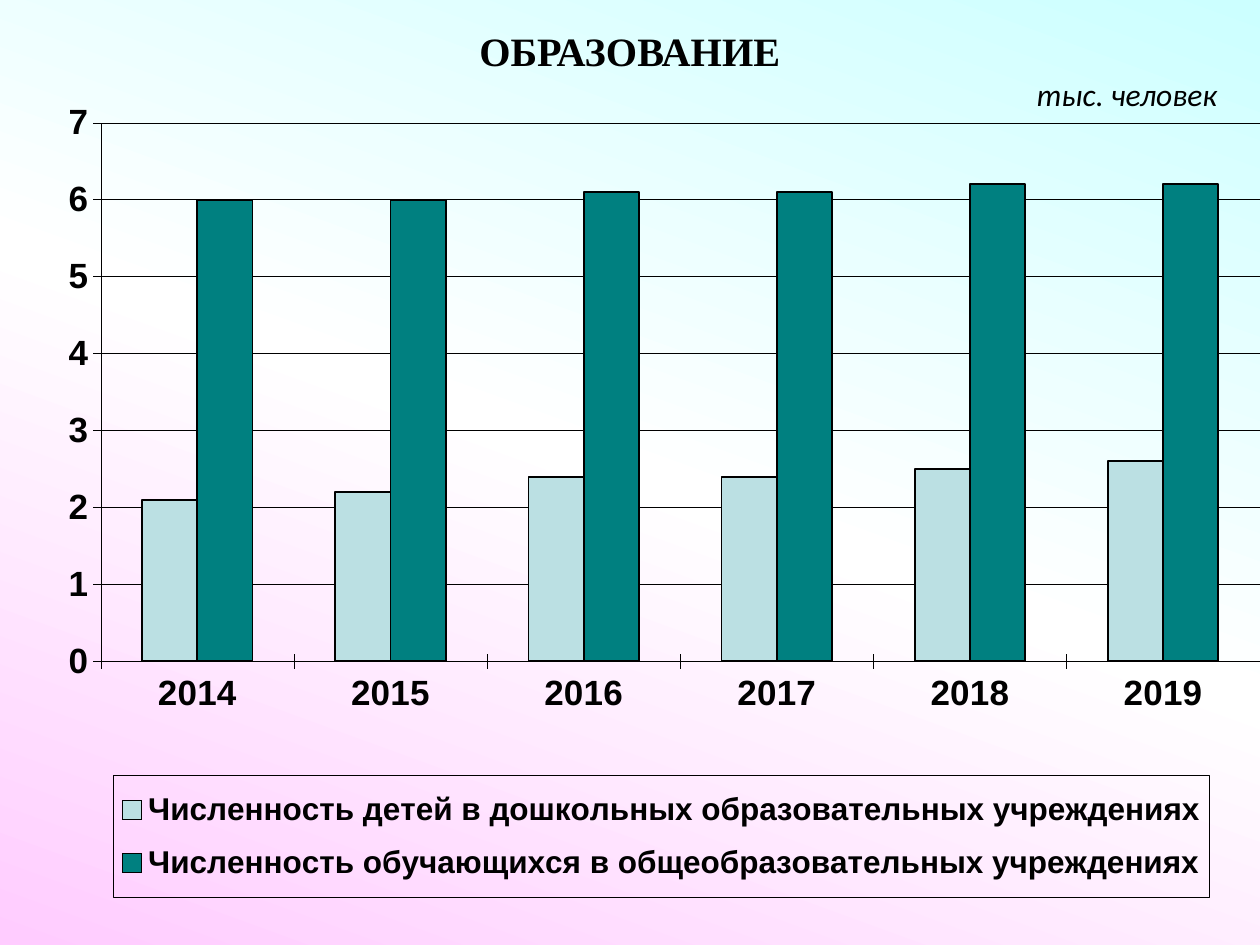
from copy import deepcopy
from dataclasses import dataclass

from lxml.etree import SubElement
from pptx import Presentation
from pptx.chart.data import CategoryChartData
from pptx.dml.color import RGBColor
from pptx.enum.chart import XL_CHART_TYPE, XL_LEGEND_POSITION, XL_TICK_LABEL_POSITION, XL_TICK_MARK
from pptx.enum.text import MSO_AUTO_SIZE, PP_ALIGN
from pptx.oxml.ns import qn
from pptx.util import Inches, Pt


@dataclass(frozen=True)
class Theme:
    ink: str = "000000"
    background: tuple = ("CCFFFF", "FFFFFF", "FFCCFF")
    series: tuple = ("BBE0E3", "008080")
    title_font: str = "Times New Roman"
    unit_font: str = "Calibri"
    chart_font: str = "Arial"
    title_size: int = 23
    unit_size: int = 18
    axis_size: int = 20
    legend_size: int = 18
    thin: float = 0.25
    outline: float = 1


THEME = Theme()
YEARS = [str(year) for year in range(2014, 2020)]
PUPILS = {
    "Численность детей в дошкольных образовательных учреждениях": (2.1, 2.2, 2.4, 2.4, 2.5, 2.6),
    "Численность обучающихся в общеобразовательных учреждениях": (6, 6, 6.1, 6.1, 6.2, 6.2),
}


def set_background(s):
    fill = s.background.fill
    fill.gradient()
    fill.gradient_angle = 250
    first = fill.gradient_stops[0]._gs
    first.addnext(deepcopy(first))
    last = len(THEME.background) - 1
    for i, (stop, color) in enumerate(zip(fill.gradient_stops, THEME.background)):
        stop.position = i / last
        stop.color.rgb = RGBColor.from_string(color)


def set_font(font, name, size, bold=False, italic=False):
    font.name = name
    font.size = Pt(size)
    font.bold = bold
    font.italic = italic
    font.color.rgb = RGBColor.from_string(THEME.ink)


def set_line(line, width):
    line.color.rgb = RGBColor.from_string(THEME.ink)
    line.width = Pt(width)


def add_text(s, text, box, align, wrap, **font):
    tf = s.shapes.add_textbox(*map(Inches, box)).text_frame
    tf.word_wrap = wrap
    tf.auto_size = MSO_AUTO_SIZE.NONE if wrap else MSO_AUTO_SIZE.SHAPE_TO_FIT_TEXT
    p = tf.paragraphs[0]
    p.text = text
    p.alignment = align
    set_font(p.font, **font)


def set_layout(parent, box, inner=False):
    for old in parent.findall(qn("c:layout")):
        parent.remove(old)
    layout = SubElement(parent, qn("c:layout"))
    manual = SubElement(layout, qn("c:manualLayout"))
    settings = [("layoutTarget", "inner")] if inner else []
    settings += [("xMode", "edge"), ("yMode", "edge"), *zip("xywh", box)]
    for tag, value in settings:
        SubElement(manual, qn(f"c:{tag}")).set("val", str(value))
    return layout


def style_axis(axis):
    axis.major_tick_mark = XL_TICK_MARK.CROSS
    axis.minor_tick_mark = XL_TICK_MARK.NONE
    set_font(axis.tick_labels.font, THEME.chart_font, THEME.axis_size, bold=True)
    set_line(axis.format.line, THEME.thin)


def style_legend(chart):
    chart.has_legend = True
    legend = chart.legend
    legend.position = XL_LEGEND_POSITION.RIGHT
    legend.include_in_layout = False
    set_font(legend.font, THEME.chart_font, THEME.legend_size, bold=True)
    element = legend._element
    layout = set_layout(element, (0.09, 0.82, 0.87, 0.13))
    element.find(qn("c:legendPos")).addnext(layout)
    frame = deepcopy(chart.value_axis._element.find(qn("c:spPr")))
    element.find(qn("c:txPr")).addprevious(frame)


def add_column_chart(s, box):
    data = CategoryChartData()
    data.categories = YEARS
    for name, values in PUPILS.items():
        data.add_series(name, values)
    chart = s.shapes.add_chart(XL_CHART_TYPE.COLUMN_CLUSTERED, *map(Inches, box), data).chart
    chart.has_title = False
    set_font(chart.font, THEME.chart_font, THEME.axis_size, bold=True)

    plot = chart.plots[0]
    plot.vary_by_categories = False
    plot.gap_width = 150
    plot.overlap = 0
    for series, color in zip(plot.series, THEME.series):
        series.format.fill.solid()
        series.format.fill.fore_color.rgb = RGBColor.from_string(color)
        set_line(series.format.line, THEME.outline)

    style_axis(chart.category_axis)
    chart.category_axis.tick_label_position = XL_TICK_LABEL_POSITION.LOW
    axis = chart.value_axis
    style_axis(axis)
    axis.minimum_scale, axis.maximum_scale, axis.major_unit = 0, 7, 1
    axis.has_major_gridlines = True
    set_line(axis.major_gridlines.format.line, THEME.thin)

    area = chart._chartSpace.chart.plotArea
    area.insert(0, set_layout(area, (0.08, 0.13, 0.92, 0.57), inner=True))
    style_legend(chart)


def main():
    prs = Presentation()
    prs.slide_width, prs.slide_height = Inches(10), Inches(7.5)
    s = prs.slides.add_slide(prs.slide_layouts[6])
    set_background(s)
    add_column_chart(s, (0, 0, 10, 7.5))
    add_text(s, "ОБРАЗОВАНИЕ", (0, 0.16, 10, 0.55), PP_ALIGN.CENTER, True,
             name=THEME.title_font, size=THEME.title_size, bold=True)
    add_text(s, "тыс. человек", (8.13, 0.55, 1.65, 0.4), PP_ALIGN.LEFT, False,
             name=THEME.unit_font, size=THEME.unit_size, italic=True)
    prs.save("out.pptx")


if __name__ == "__main__":
    main()
